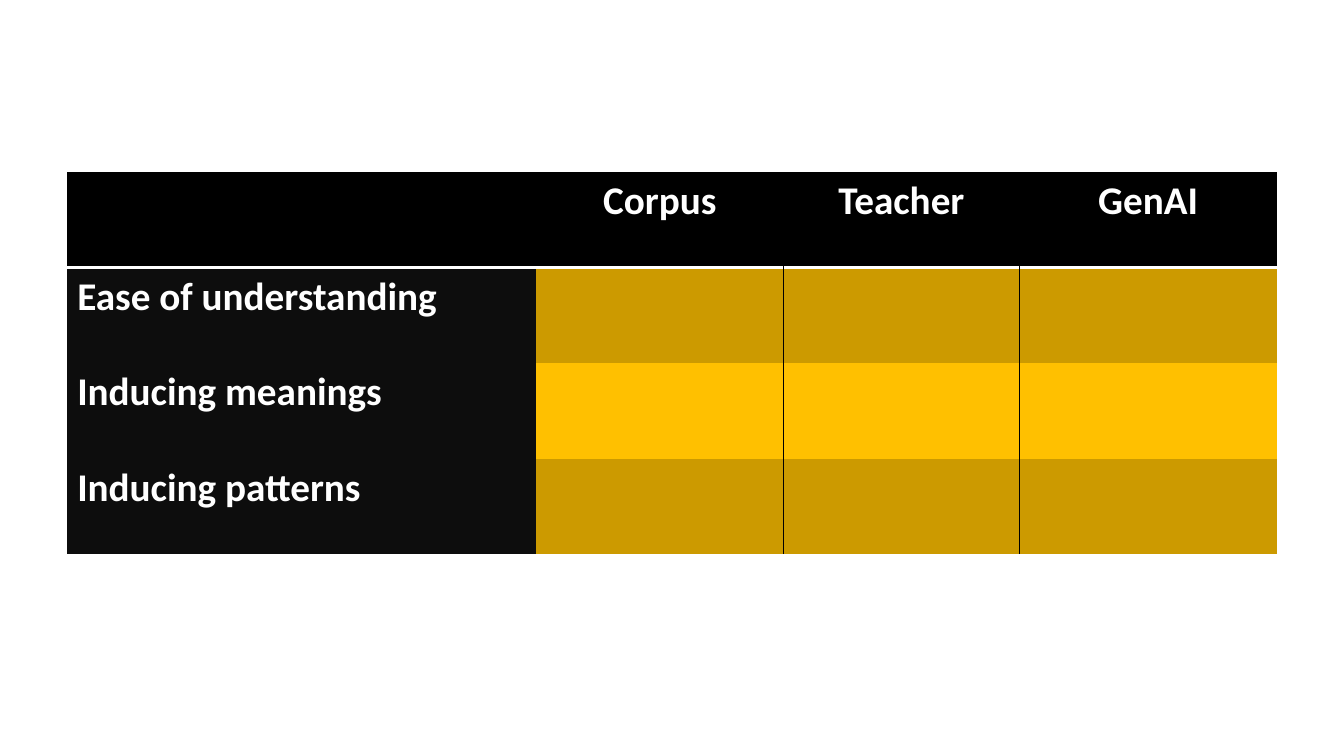
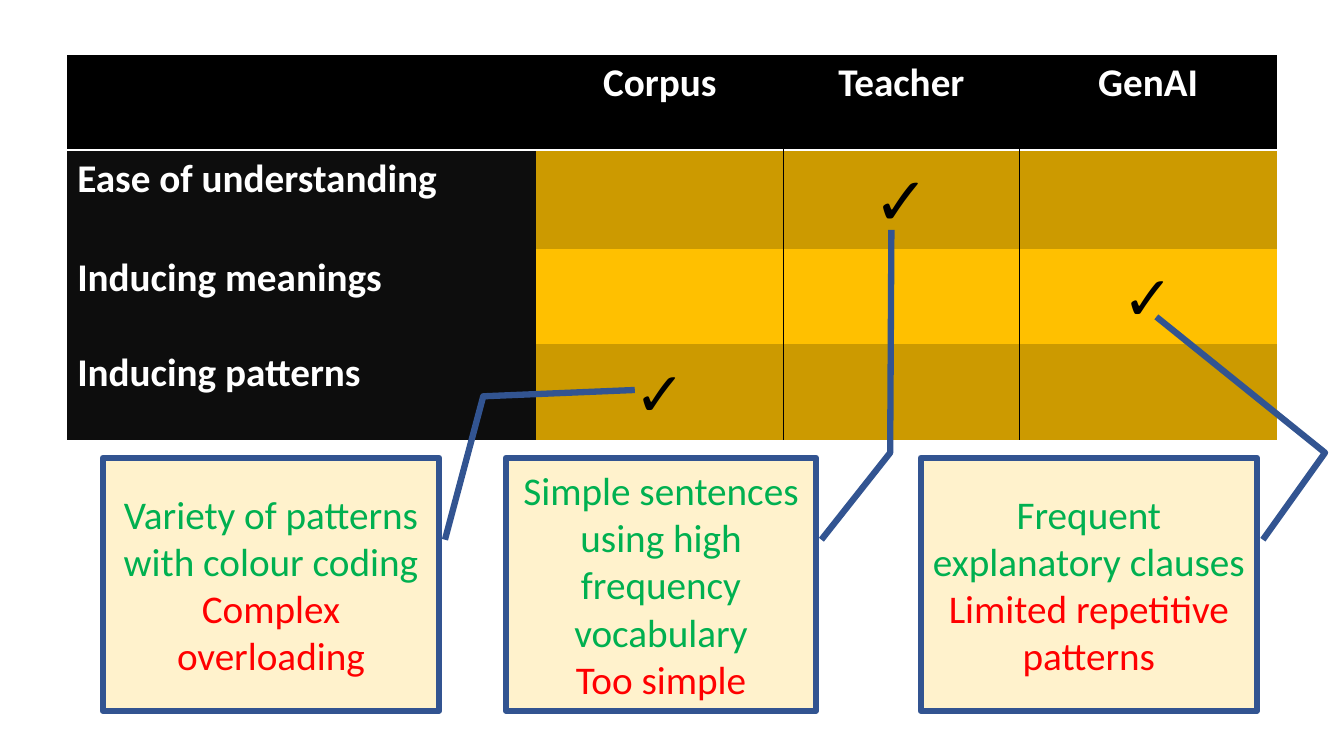
from dataclasses import dataclass

import lxml.etree
import pptx
import pptx.dml.color
import pptx.enum.shapes
import pptx.enum.text
import pptx.oxml.ns
import pptx.slide
import pptx.table
import pptx.text.text
import pptx.util

RGBColor = pptx.dml.color.RGBColor
PP_ALIGN = pptx.enum.text.PP_ALIGN
MIDDLE = pptx.enum.text.MSO_ANCHOR.MIDDLE

# Shared style
EMU_PER_PX = 9525
SLIDE_WIDTH, SLIDE_HEIGHT = 1280, 720
BLACK = RGBColor(0x00, 0x00, 0x00)
WHITE = RGBColor(0xFF, 0xFF, 0xFF)
CHARCOAL = RGBColor(0x0D, 0x0D, 0x0D)
DARK_GOLD = RGBColor(0xCC, 0x9A, 0x00)
GOLD = RGBColor(0xFF, 0xC0, 0x00)
CREAM = RGBColor(0xFF, 0xF2, 0xCC)
BLUE = RGBColor(0x32, 0x54, 0x91)
GREEN = RGBColor(0x00, 0xB0, 0x50)
RED = RGBColor(0xFF, 0x00, 0x00)
BODY_FONT = "Calibri"
CHECK_FONT = "Roboto Slab"
TEXT_SIZE = 28
PLAIN_TABLE_STYLE = "{2D5ABB26-0587-4C30-8999-92F81FD0307C}"

# Comparison table
SOURCES = ["Corpus", "Teacher", "GenAI"]
CRITERIA = ["Ease of understanding", "Inducing meanings", "Inducing patterns"]
TABLE_LEFT = 64
COLUMN_WIDTHS = [447, 235, 225, 245]
ROW_HEIGHT = 91

# Callout boxes
CALLOUT_TOP, CALLOUT_HEIGHT = 436, 241
LEADER_START = (0.324, 1.018)


@dataclass(frozen=True)
class Check:
    row: int
    column: int
    size: int


@dataclass(frozen=True)
class Callout:
    left: int
    width: int
    strength: str
    weakness: str
    leader: tuple[float, ...]  # y and x of the bend, then of the end


CHECKS = [Check(1, 2, 48), Check(2, 3, 44), Check(3, 1, 44)]
CALLOUTS = [
    Callout(482, 295, "Simple sentences using high frequency vocabulary",
            "Too simple", (-0.02, 1.24, -0.901, 1.244)),
    Callout(98, 320, "Variety of patterns with colour coding",
            "Complex overloading", (-0.243, 1.132, -0.268, 1.583)),
    Callout(877, 320, "Frequent explanatory clauses",
            "Limited repetitive patterns", (-0.02, 1.203, -0.557, 0.701)),
]


def px(length: int) -> pptx.util.Emu:
    return pptx.util.Emu(length * EMU_PER_PX)


def write(para: pptx.text.text._Paragraph, text: str, color: RGBColor,
          size: int = TEXT_SIZE, font: str = BODY_FONT, bold: bool = False,
          align: PP_ALIGN = PP_ALIGN.CENTER) -> None:
    para.alignment = align
    span = para.add_run()
    span.text = text
    span.font.name = font
    span.font.size = pptx.util.Pt(size)
    span.font.bold = bold
    span.font.color.rgb = color


def fill_cell(cell: pptx.table._Cell, color: RGBColor) -> None:
    cell.fill.solid()
    cell.fill.fore_color.rgb = color


def set_borders(cell: pptx.table._Cell, sides: str, color: RGBColor,
                points: int) -> None:
    """Draw the given sides, listed in the order L, R, T, B."""
    qn = pptx.oxml.ns.qn
    properties = cell._tc.get_or_add_tcPr()
    for index, side in enumerate(sides):
        line = lxml.etree.Element(qn(f"a:ln{side}"), w=str(pptx.util.Pt(points)))
        solid = lxml.etree.SubElement(line, qn("a:solidFill"))
        lxml.etree.SubElement(solid, qn("a:srgbClr"), val=str(color))
        properties.insert(index, line)


def add_comparison(page: pptx.slide.Slide, top: int) -> pptx.table.Table:
    frame = page.shapes.add_table(
        len(CRITERIA) + 1, len(SOURCES) + 1, px(TABLE_LEFT), px(top),
        px(sum(COLUMN_WIDTHS)), px(ROW_HEIGHT * (len(CRITERIA) + 1)))
    table = frame.table
    table.first_row = table.horz_banding = False
    style = table._tbl.tblPr.find(pptx.oxml.ns.qn("a:tableStyleId"))
    style.text = PLAIN_TABLE_STYLE
    for column, width in zip(table.columns, COLUMN_WIDTHS):
        column.width = px(width)
    for row in table.rows:
        row.height = px(ROW_HEIGHT)

    # Header row
    for index, heading in enumerate(["", *SOURCES]):
        cell = table.cell(0, index)
        fill_cell(cell, BLACK)
        set_borders(cell, "B", WHITE, 2)
        if heading:
            write(cell.text_frame.paragraphs[0], heading, WHITE, bold=True)

    # One row for each criterion, in alternating gold
    for row_index, criterion in enumerate(CRITERIA, start=1):
        label = table.cell(row_index, 0)
        fill_cell(label, CHARCOAL)
        write(label.text_frame.paragraphs[0], criterion, WHITE, bold=True,
              align=PP_ALIGN.LEFT)
        for column_index in range(1, len(SOURCES) + 1):
            cell = table.cell(row_index, column_index)
            fill_cell(cell, DARK_GOLD if row_index % 2 else GOLD)
            left = "L" if column_index > 1 else ""
            right = "R" if column_index < len(SOURCES) else ""
            set_borders(cell, left + right, BLACK, 1)
    return table


def add_check(table: pptx.table.Table, check: Check) -> None:
    cell = table.cell(check.row, check.column)
    cell.vertical_anchor = MIDDLE
    write(cell.text_frame.paragraphs[0], "✓", BLACK, check.size, CHECK_FONT,
          bold=True)


def add_callout(page: pptx.slide.Slide, callout: Callout) -> None:
    box = page.shapes.add_shape(
        pptx.enum.shapes.MSO_SHAPE.LINE_CALLOUT_2, px(callout.left),
        px(CALLOUT_TOP), px(callout.width), px(CALLOUT_HEIGHT))
    for index, value in enumerate(LEADER_START + callout.leader):
        box.adjustments[index] = value
    box.shadow.inherit = False
    box.fill.solid()
    box.fill.fore_color.rgb = CREAM
    box.line.color.rgb = BLUE
    box.line.width = pptx.util.Pt(4.5)
    text = box.text_frame
    text.word_wrap = True
    text.vertical_anchor = MIDDLE
    write(text.paragraphs[0], callout.strength, GREEN)
    write(text.add_paragraph(), callout.weakness, RED)


def main() -> None:
    deck = pptx.Presentation()
    deck.slide_width, deck.slide_height = px(SLIDE_WIDTH), px(SLIDE_HEIGHT)
    blank = deck.slide_layouts[6]

    # Slide 1: empty comparison
    add_comparison(deck.slides.add_slide(blank), top=164)

    # Slide 2: comparison with results
    page = deck.slides.add_slide(blank)
    table = add_comparison(page, top=52)
    for check in CHECKS:
        add_check(table, check)
    for callout in CALLOUTS:
        add_callout(page, callout)

    deck.save("out.pptx")


if __name__ == "__main__":
    main()
